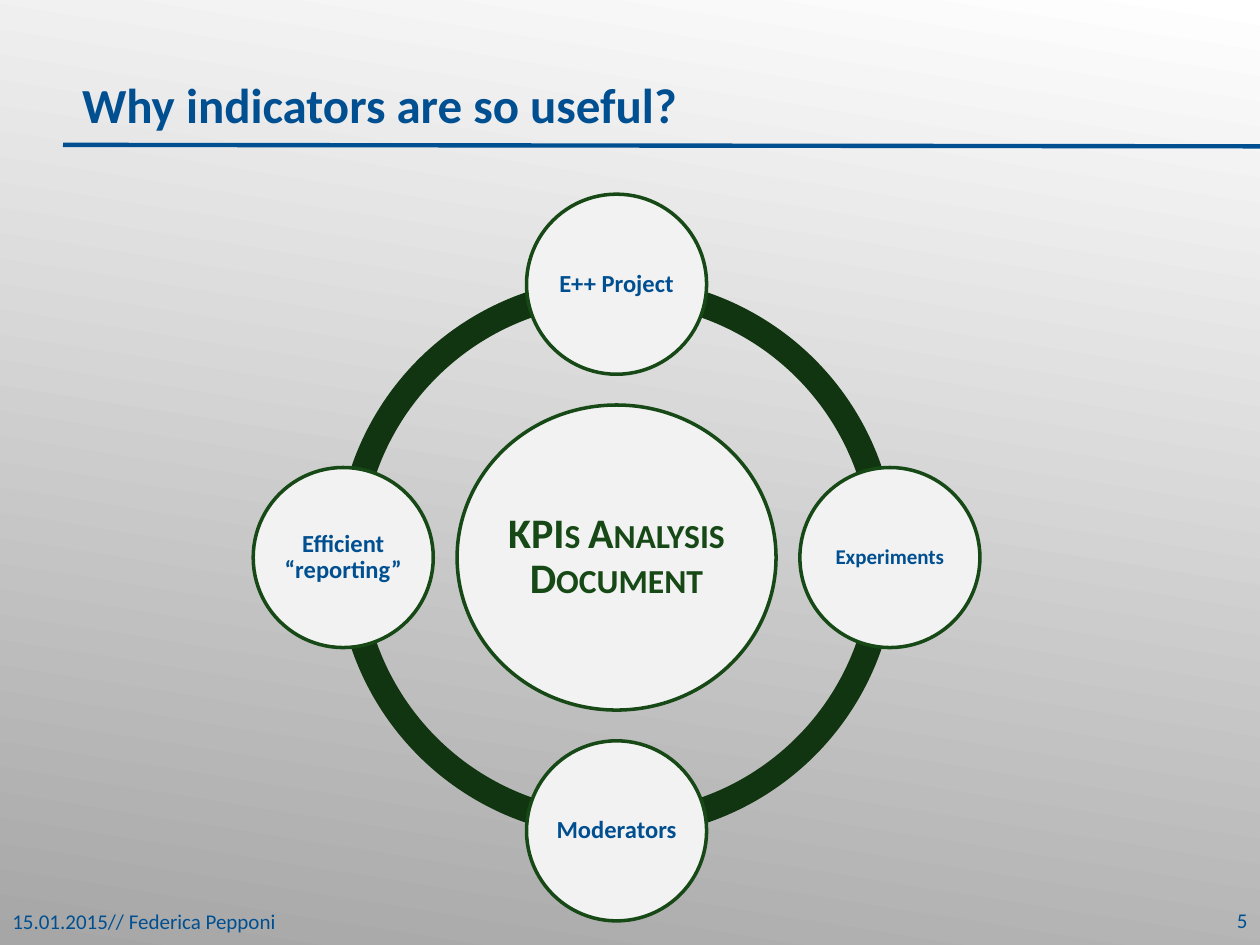
from pptx import Presentation
from pptx.dml.color import RGBColor
from pptx.enum.shapes import MSO_CONNECTOR, MSO_SHAPE
from pptx.enum.text import MSO_ANCHOR, MSO_AUTO_SIZE, PP_ALIGN
from pptx.oxml.ns import qn
from pptx.util import Cm, Pt
from lxml.etree import SubElement

TITLE = "Why indicators are so useful?"
HUB = "KPIs Analysis Document"
# label, type size, direction from the hub (x, y)
NODES = [
    ("E++ Project", 14, (0, -1)),
    ("Experiments", 12, (1, 0)),
    ("Moderators", 14, (0, 1)),
    ("Efficient “reporting”", 14, (-1, 0)),
]
# text, left, top, alignment
FOOTERS = [
    ("5", 19.48, 18.03, PP_ALIGN.RIGHT),
    ("15.01.2015// Federica Pepponi", 0, 18.06, PP_ALIGN.LEFT),
]


class Theme:
    font = "Calibri"
    blue = RGBColor.from_string("004F91")
    green = RGBColor.from_string("174917")
    ring = RGBColor.from_string("113511")
    disc = RGBColor.from_string("F2F2F2")
    gradient = (RGBColor.from_string("FFFFFF"), RGBColor.from_string("A6A6A6"))
    title_size, hub_size, footer_size = 28, 24, 12


WIDTH, HEIGHT = 25.4, 19.05
CENTRE_X, CENTRE_Y = 12.43, 11.24
ORBIT = 5.51
NODE_SIZE = 3.63
HUB_SIZE = (6.43, 6.15)
RING_SIZE = 11.3
RING_THICKNESS = 0.046
QUARTER_TURN = 54  # 90 degrees in adjustment units


def style_text(text_frame, text, size, colour, alignment, bold=False):
    text_frame.text = text
    text_frame.word_wrap = True
    paragraph = text_frame.paragraphs[0]
    paragraph.alignment = alignment
    font = paragraph.runs[0].font
    font.name, font.size, font.bold = Theme.font, Pt(size), bold
    font.color.rgb = colour
    return paragraph


def add_centred(slide, preset, x, y, width, height):
    """Add a shape by its centre point, in centimetres."""
    shape = slide.shapes.add_shape(
        preset, Cm(x - width / 2), Cm(y - height / 2), Cm(width), Cm(height))
    shape.shadow.inherit = False
    shape.fill.solid()
    return shape


def add_disc(slide, x, y, width, height, text, size, colour):
    disc = add_centred(slide, MSO_SHAPE.OVAL, x, y, width, height)
    disc.fill.fore_color.rgb = Theme.disc
    disc.line.color.rgb = Theme.green
    disc.line.width = Pt(2)
    frame = disc.text_frame
    frame.vertical_anchor = MSO_ANCHOR.MIDDLE
    frame.margin_left = frame.margin_right = Cm(0.05)
    frame.margin_top = frame.margin_bottom = Cm(0.05)
    paragraph = style_text(frame, text, size, colour, PP_ALIGN.CENTER, bold=True)
    paragraph.line_spacing = 0.9
    return paragraph


def add_backdrop(slide):
    backdrop = slide.shapes.add_shape(
        MSO_SHAPE.RECTANGLE, 0, 0, Cm(WIDTH), Cm(HEIGHT))
    backdrop.shadow.inherit = False
    backdrop.line.fill.background()
    backdrop.fill.gradient()
    backdrop.fill.gradient_angle = 261
    for position, (stop, colour) in enumerate(
            zip(backdrop.fill.gradient_stops, Theme.gradient)):
        stop.position = position
        stop.color.rgb = colour
    slide.shapes._spTree.insert(2, backdrop._element)  # behind the title


def add_header(slide):
    title = slide.shapes.title
    title.left, title.top, title.width, title.height = (
        Cm(1.4), Cm(1.5), Cm(22.96), Cm(1.35))
    paragraph = style_text(title.text_frame, TITLE, Theme.title_size,
                           Theme.blue, PP_ALIGN.LEFT, bold=True)
    paragraph.line_spacing = 0.9
    paragraph.space_after = Pt(12)
    title.text_frame.vertical_anchor = MSO_ANCHOR.TOP
    title.text_frame.auto_size = MSO_AUTO_SIZE.SHAPE_TO_FIT_TEXT

    rule = slide.shapes.add_connector(
        MSO_CONNECTOR.STRAIGHT, Cm(1.27), Cm(2.92), Cm(WIDTH), Cm(2.95))
    rule.line.color.rgb = Theme.blue
    rule.line.width = Pt(2.5)
    SubElement(rule._element.spPr, qn("a:effectLst"))


def add_footers(slide):
    for text, left, top, alignment in FOOTERS:
        box = slide.shapes.add_textbox(Cm(left), Cm(top), Cm(5.92), Cm(1.02))
        box.text_frame.vertical_anchor = MSO_ANCHOR.MIDDLE
        style_text(box.text_frame, text, Theme.footer_size, Theme.blue, alignment)


def add_cycle(slide):
    for quarter in range(4):
        arc = add_centred(slide, MSO_SHAPE.BLOCK_ARC, CENTRE_X, CENTRE_Y,
                          RING_SIZE, RING_SIZE)
        arc.adjustments[0] = quarter * QUARTER_TURN
        arc.adjustments[1] = (quarter + 1) % 4 * QUARTER_TURN
        arc.adjustments[2] = RING_THICKNESS
        arc.fill.fore_color.rgb = Theme.ring
        arc.line.fill.background()

    hub = add_disc(slide, CENTRE_X, CENTRE_Y, *HUB_SIZE, HUB,
                   Theme.hub_size, Theme.green)
    hub.runs[0].font._element.set("cap", "small")
    for label, size, (across, down) in NODES:
        add_disc(slide, CENTRE_X + across * ORBIT, CENTRE_Y + down * ORBIT,
                 NODE_SIZE, NODE_SIZE, label, size, Theme.blue)


def main():
    presentation = Presentation()
    presentation.slide_width, presentation.slide_height = Cm(WIDTH), Cm(HEIGHT)
    slide = presentation.slides.add_slide(presentation.slide_layouts[5])
    add_backdrop(slide)
    add_header(slide)
    add_footers(slide)
    add_cycle(slide)
    presentation.save("out.pptx")


if __name__ == "__main__":
    main()
